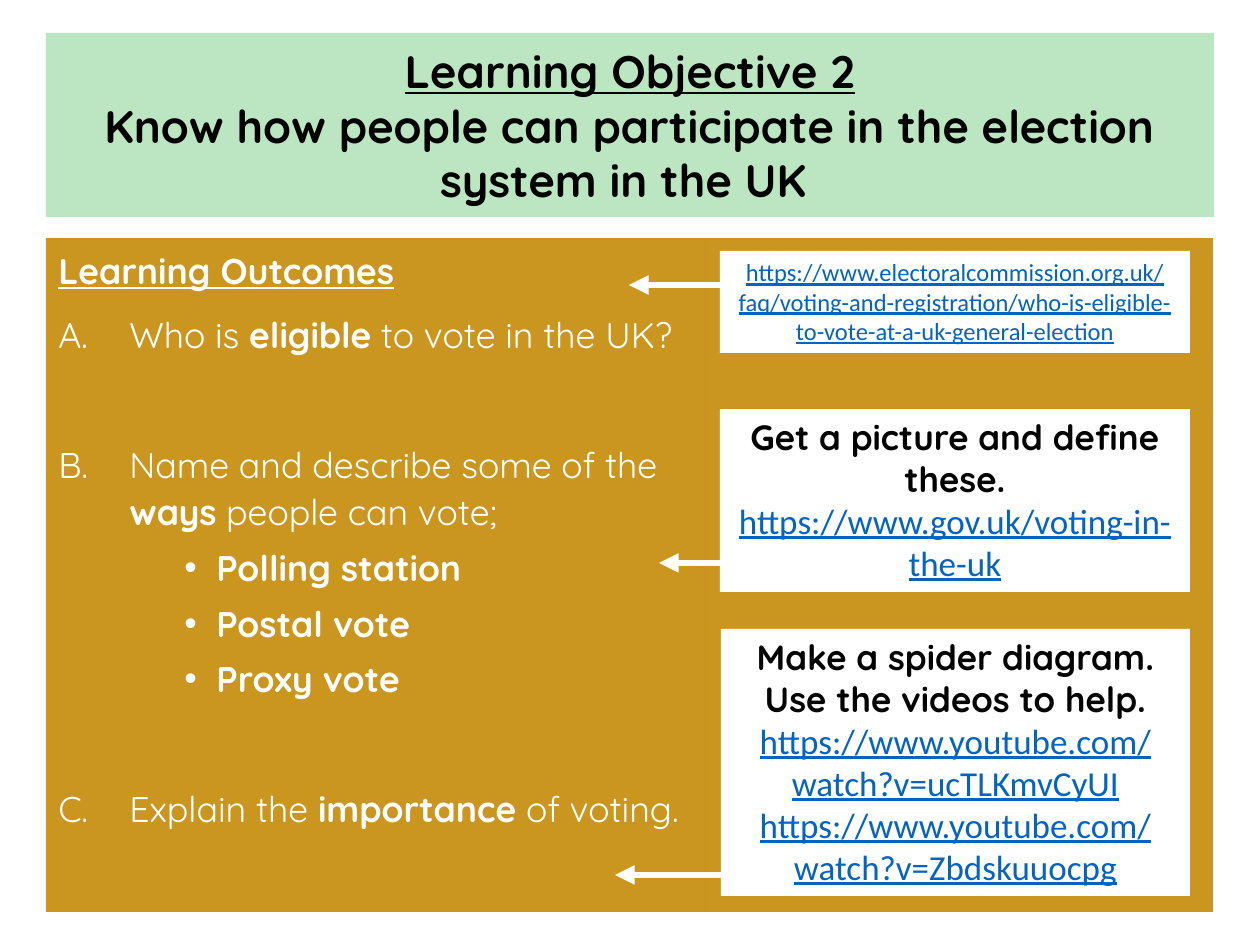
"""Build the slide on taking part in UK elections."""
from lxml.etree import SubElement
from pptx import Presentation
from pptx.dml.color import RGBColor
from pptx.enum.shapes import MSO_CONNECTOR, MSO_SHAPE
from pptx.enum.text import MSO_ANCHOR, MSO_AUTO_SIZE, PP_ALIGN
from pptx.oxml.ns import qn
from pptx.util import Pt

PX = 914400 // 126
HEADING = {"name": "Quicksand", "bold": True, "underline": True}
STRONG = {"name": "Quicksand", "bold": True}
PLAIN = {"name": "Quicksand", "bold": False}
LINK = {"name": "Calibri", "bold": False, "underline": True}
BLACK, WHITE, BLUE, GREEN, OCHRE = "000000", "FFFFFF", "0563C1", "B5E4BB", "C99114"


def rgb(value):
    """Return the colour of a hex string."""
    return RGBColor.from_string(value)


def apply(target, values):
    """Set each named attribute of the target."""
    for name, value in values.items():
        setattr(target, name, value)


class Board:
    """Holds the style and the current slide."""

    def __init__(self, deck):
        """Add a title-only slide to the deck."""
        self.slide = deck.slides.add_slide(deck.slide_layouts[5])
        self.frame_format = {"word_wrap": True, "auto_size": MSO_AUTO_SIZE.NONE}

    def fill(self, shape, colour, opacity=100):
        """Fill a shape with a colour that may be see-through."""
        shape.fill.solid()
        shape.fill.fore_color.rgb = rgb(colour)
        if opacity < 100:
            tint = shape.fill._xPr.find(qn("a:solidFill"))[0]
            SubElement(tint, qn("a:alpha"), val=str(opacity * 1000))

    def add_words(self, paragraph, parts, size, colour):
        """Add formatted runs to a paragraph."""
        for words, style in parts:
            run = paragraph.add_run()
            run.text = words
            apply(run.font, {**style, "size": Pt(size)})
            run.font.color.rgb = rgb(colour)

    def title(self, left, top, width, height, heading, objective):
        """Fill the title placeholder with a heading and an objective."""
        banner = self.slide.shapes.title
        apply(banner, {"left": left * PX, "top": top * PX,
                       "width": width * PX, "height": height * PX})
        self.fill(banner, GREEN, 90)
        apply(banner.text_frame, {**self.frame_format, "vertical_anchor": MSO_ANCHOR.MIDDLE})
        paragraph = banner.text_frame.paragraphs[0]
        paragraph.alignment = PP_ALIGN.CENTER
        self.add_words(paragraph, [(heading, HEADING)], 26, BLACK)
        paragraph.add_line_break()
        self.add_words(paragraph, [(objective, STRONG)], 26, BLACK)

    def panel(self, left, top, width, height, colour, opacity=100):
        """Add a rectangle without outline and return its text frame."""
        box = self.slide.shapes.add_shape(
            MSO_SHAPE.RECTANGLE, left * PX, top * PX, width * PX, height * PX)
        box.shadow.inherit = False
        box.line.fill.background()
        self.fill(box, colour, opacity)
        apply(box.text_frame, {**self.frame_format, "vertical_anchor": MSO_ANCHOR.TOP})
        return box.text_frame

    def outcome(self, frame, parts, before, letter=0, bullet=False):
        """Add a lettered, bulleted or plain outcome to a text frame."""
        first = not frame.paragraphs[0].runs
        paragraph = frame.paragraphs[0] if first else frame.add_paragraph()
        apply(paragraph, {"alignment": PP_ALIGN.LEFT, "line_spacing": 1.1,
                          "space_before": Pt(before), "level": int(bullet)})
        properties = paragraph._p.get_or_add_pPr()
        margin, hang = (158, 32) if bullet else (71, 71) if letter else (0, 0)
        properties.set("marL", str(margin * PX))
        properties.set("indent", str(-hang * PX))
        if bullet:
            SubElement(properties, qn("a:buFont"), typeface="Arial")
            SubElement(properties, qn("a:buChar"), char="•")
        elif letter:
            SubElement(properties, qn("a:buFont"), typeface="Quicksand")
            SubElement(properties, qn("a:buAutoNum"), type="alphaUcPeriod", startAt=str(letter))
        self.add_words(paragraph, parts, 20.4, WHITE)

    def task(self, left, top, width, height, size, instruction, links):
        """Add a white task box with an instruction and web addresses."""
        frame = self.panel(left, top, width, height, WHITE)
        lines = [(instruction, STRONG, BLACK)] if instruction else []
        lines += [(link, LINK, BLUE) for link in links]
        for index, (words, style, colour) in enumerate(lines):
            paragraph = frame.add_paragraph() if index else frame.paragraphs[0]
            paragraph.alignment = PP_ALIGN.CENTER
            self.add_words(paragraph, [(words, style)], size, colour)

    def arrow(self, start, end, height):
        """Add a level white arrow."""
        pointer = self.slide.shapes.add_connector(
            MSO_CONNECTOR.STRAIGHT, start * PX, height * PX, end * PX, height * PX)
        pointer.line.color.rgb = rgb(WHITE)
        pointer.line.width = Pt(3.75)
        SubElement(pointer.line._get_or_add_ln(), qn("a:tailEnd"), type="triangle")
        SubElement(pointer._element.spPr, qn("a:effectLst"))


def main():
    """Build and save the slide."""
    deck = Presentation()
    apply(deck, {"slide_width": 1260 * PX, "slide_height": 945 * PX})
    board = Board(deck)
    board.title(46, 33, 1168, 184, "Learning Objective 2",
                "Know how people can participate in the election system in the UK ")

    outcomes = board.panel(46, 238, 659, 674, OCHRE, 95)
    board.panel(705, 238, 508, 674, OCHRE, 95)
    board.outcome(outcomes, [("Learning Outcomes", HEADING)], 0)
    questions = [
        ("Who is ", "eligible", " to vote in the UK?", 10, []),
        ("Name and describe some of the ", "ways", " people can vote;", 47,
         ["Polling station", "Postal vote", "Proxy vote"]),
        ("Explain the ", "importance", " of voting.", 47, []),
    ]
    for letter, (opening, keyword, ending, before, ways) in enumerate(questions, 1):
        parts = [(opening, PLAIN), (keyword, STRONG), (ending, PLAIN)]
        board.outcome(outcomes, parts, before, letter)
        for way in ways:
            board.outcome(outcomes, [(way, STRONG)], 5, bullet=True)

    tasks = [
        ((720, 409, 470, 183, 20), "Get a picture and define these.",
         ["https://www.gov.uk/voting-in-the-uk"], (752, 659, 563)),
        ((721, 629, 469, 267, 20), "Make a spider diagram. Use the videos to help.",
         ["https://www.youtube.com/watch?v=ucTLKmvCyUI",
          "https://www.youtube.com/watch?v=Zbdskuuocpg"], (735, 615, 875)),
        ((720, 251, 470, 102, 14), "",
         ["https://www.electoralcommission.org.uk/faq/voting-and-registration/"
          "who-is-eligible-to-vote-at-a-uk-general-election"], (722, 629, 285)),
    ]
    for place, instruction, links, reach in tasks:
        board.task(*place, instruction, links)
        board.arrow(*reach)
    deck.save("out.pptx")


if __name__ == "__main__":
    main()
